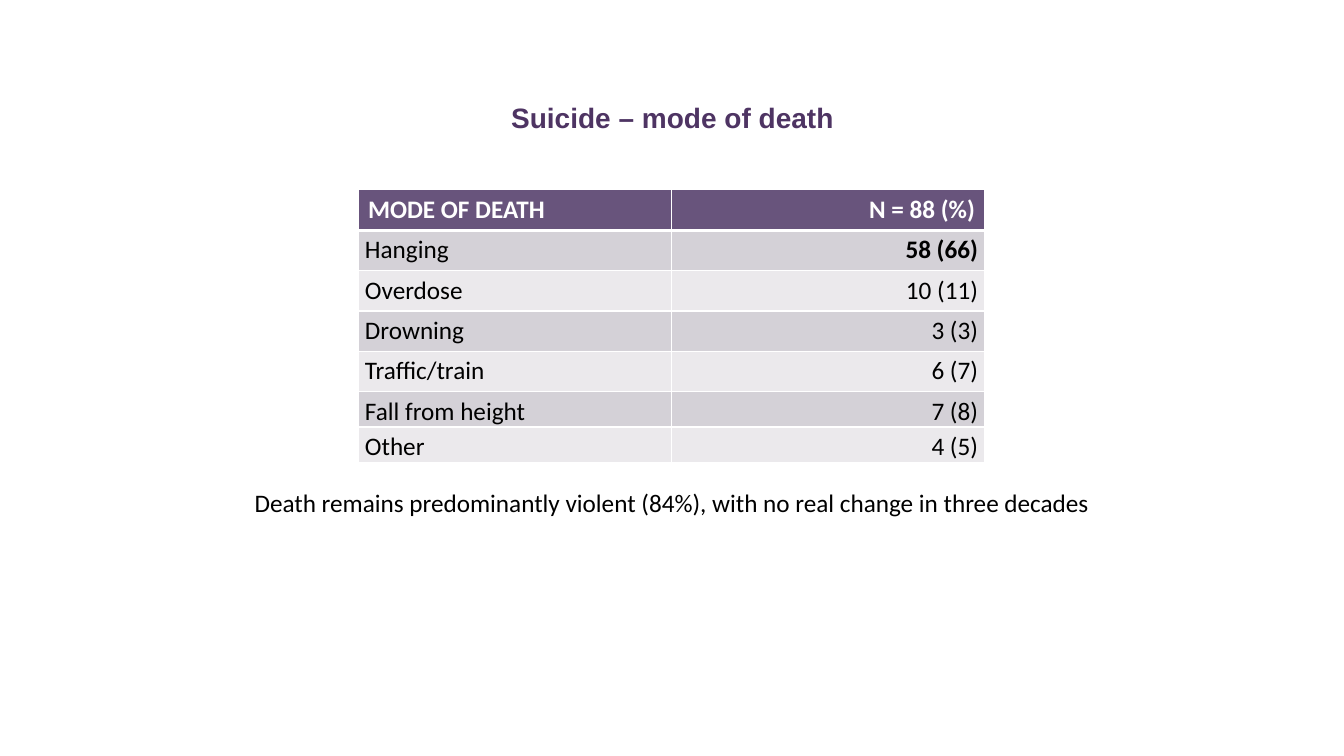
from lxml import etree
from pptx import Presentation
from pptx import util as u
from pptx.dml.color import RGBColor
from pptx.enum import text
from pptx.oxml import ns

PX = 9144
WHITE, BLACK, PURPLE, TITLE_PURPLE = "FFFFFF", "000000", "68547C", "4E3463"
BANDS = ["D4D1D7", "EBE9EC"]
HEADER = ("MODE OF DEATH", "N = 88 (%)")
MODES = [
    ("Hanging", "58 (66)"),
    ("Overdose", "10 (11)"),
    ("Drowning", "3 (3)"),
    ("Traffic/train", "6 (7)"),
    ("Fall from height", "7 (8)"),
    ("Other", "4 (5)"),
]
ROW_HEIGHTS = [40] * 5 + [33] * 2
ALIGNMENTS = [text.PP_ALIGN.LEFT, text.PP_ALIGN.RIGHT]


def color(hex_string):
    """Turn a hex string into a colour."""
    return RGBColor.from_string(hex_string)


def emu(box):
    """Turn a box in px into EMU lengths."""
    return [u.Emu(length * PX) for length in box]


def add_run(paragraph, wording, size, font, hex_string, bold=False):
    """Add one formatted run to a paragraph."""
    run = paragraph.add_run()
    run.text = wording
    run.font.size = u.Pt(size)
    run.font.name = font
    run.font.bold = bold
    run.font.color.rgb = color(hex_string)


def set_borders(cell, top, bottom):
    """Draw white cell borders with the given top and bottom widths in points."""
    properties = cell._tc.get_or_add_tcPr()
    for side, width in (("L", 1), ("R", 1), ("T", top), ("B", bottom)):
        line = etree.SubElement(properties, ns.qn(f"a:ln{side}"), w=str(u.Pt(width)))
        fill = etree.SubElement(line, ns.qn("a:solidFill"))
        etree.SubElement(fill, ns.qn("a:srgbClr"), val=WHITE)


def add_title(slide, box):
    """Place and format the slide title."""
    title = slide.shapes.title
    title.left, title.top, title.width, title.height = emu(box)
    title.text_frame.vertical_anchor = text.MSO_ANCHOR.MIDDLE
    paragraph = title.text_frame.paragraphs[0]
    paragraph.alignment = text.PP_ALIGN.CENTER
    add_run(paragraph, "Suicide – mode of death", 20, "Arial", TITLE_PURPLE, True)


def add_mode_table(slide, box):
    """Place the table of modes of death."""
    rows = [HEADER] + MODES
    table = slide.shapes.add_table(len(rows), len(HEADER), *emu(box)).table
    for row, height in zip(table.rows, ROW_HEIGHTS):
        row.height = u.Emu(height * PX)
    for r, values in enumerate(rows):
        is_header = r == 0
        for c, value in enumerate(values):
            cell = table.cell(r, c)
            set_borders(cell, 3 if r == 1 else 1, 3 if is_header else 1)
            cell.fill.solid()
            cell.fill.fore_color.rgb = color(PURPLE if is_header else BANDS[(r - 1) % 2])
            paragraph = cell.text_frame.paragraphs[0]
            paragraph.alignment = ALIGNMENTS[c]
            if not is_header:
                cell.margin_left = cell.margin_right = u.Emu(7 * PX)
                cell.margin_top = cell.margin_bottom = 0
                paragraph.line_spacing = 1.15
                paragraph.space_after = u.Pt(10)
            bold = is_header or value == "58 (66)"
            add_run(paragraph, value, 18, "Calibri", WHITE if is_header else BLACK, bold)


def add_conclusion(slide, box):
    """Place the concluding sentence below the table."""
    frame = slide.shapes.add_textbox(*emu(box)).text_frame
    frame.word_wrap = True
    frame.auto_size = text.MSO_AUTO_SIZE.SHAPE_TO_FIT_TEXT
    paragraph = frame.paragraphs[0]
    paragraph.alignment = text.PP_ALIGN.CENTER
    wording = "Death remains predominantly violent (84%), with no real change in three decades"
    add_run(paragraph, wording, 18, "Calibri", BLACK)


def main():
    """Build and save the slide."""
    presentation = Presentation()
    presentation.slide_width, presentation.slide_height = emu((1333, 750))
    slide = presentation.slides.add_slide(presentation.slide_layouts[5])
    add_title(slide, (73, 54, 1188, 125))
    add_mode_table(slide, (355, 188, 622, sum(ROW_HEIGHTS)))
    add_conclusion(slide, (180, 479, 973, 40))
    presentation.save("out.pptx")


if __name__ == "__main__":
    main()
